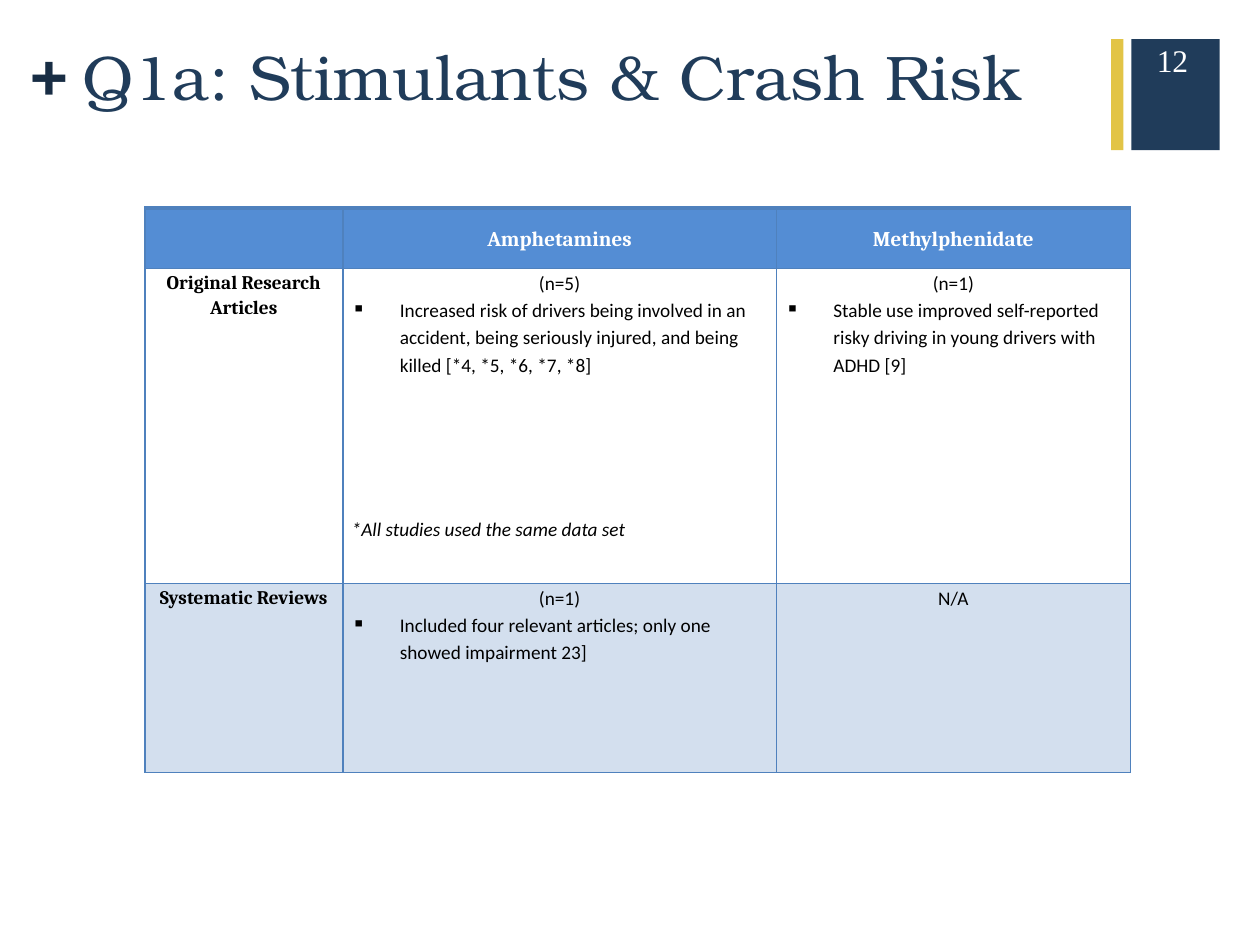
from lxml import etree
from pptx import Presentation
from pptx.dml.color import RGBColor
from pptx.enum.shapes import MSO_SHAPE
from pptx.enum.text import MSO_ANCHOR, MSO_AUTO_SIZE, PP_ALIGN
from pptx.oxml.ns import qn
from pptx.util import Cm, Pt

NAVY = RGBColor(0x20, 0x3C, 0x5A)
DARK = RGBColor(0x18, 0x2D, 0x44)
GOLD = RGBColor(0xE2, 0xC4, 0x46)
BLUE = RGBColor(0x54, 0x8D, 0xD4)
PALE = RGBColor(0xD3, 0xDF, 0xEE)
EDGE = RGBColor(0x4F, 0x81, 0xBD)
WHITE = RGBColor(0xFF, 0xFF, 0xFF)
BLACK = RGBColor(0, 0, 0)

RECT = MSO_SHAPE.RECTANGLE
LEFT, CENTER = PP_ALIGN.LEFT, PP_ALIGN.CENTER
TOP, MIDDLE = MSO_ANCHOR.TOP, MSO_ANCHOR.MIDDLE
FIXED = MSO_AUTO_SIZE.NONE

SERIF, HEAD, BODY = "TeX Gyre Bonum", "Cambria", "Calibri"
COLS = (3.99, 8.74, 7.14)
ROWS = (1.22, 6.35, 3.81)
FILLS = (BLUE, None, PALE)

# Each cell is a list of (kind, text) paragraphs
CELLS = (
    ([], [("head", "Amphetamines")], [("head", "Methylphenidate")]),
    (
        [("label", "Original Research Articles")],
        [
            ("count", "(n=5)"),
            ("bullet", "Increased risk of drivers being involved in an accident, "
                       "being seriously injured, and being killed "
                       "[*4, *5, *6, *7, *8]"),
            ("note", "*All studies used the same data set"),
        ],
        [
            ("count", "(n=1)"),
            ("bullet", "Stable use improved self-reported risky driving "
                       "in young drivers with ADHD [9]"),
        ],
    ),
    (
        [("label", "Systematic Reviews")],
        [
            ("count", "(n=1)"),
            ("bullet", "Included four relevant articles; "
                       "only one showed impairment 23]"),
        ],
        [("count", "N/A")],
    ),
)


def set_font(para, name, size, color, bold=False, italic=False):
    font = para.font
    font.name, font.size = name, Pt(size)
    font.bold, font.italic = bold, italic
    font.color.rgb = color


def add_bar(slide, left, top, width, height, color):
    bar = slide.shapes.add_shape(RECT, Cm(left), Cm(top), Cm(width), Cm(height))
    bar.shadow.inherit = False
    bar.fill.solid()
    bar.fill.fore_color.rgb = color
    bar.line.fill.background()


def add_label(slide, left, top, width, height, text, inset):
    box = slide.shapes.add_textbox(Cm(left), Cm(top), Cm(width), Cm(height))
    frame = box.text_frame
    frame.word_wrap = True
    frame.margin_left = frame.margin_right = Cm(2 * inset)
    frame.margin_top = frame.margin_bottom = Cm(inset)
    para = frame.paragraphs[0]
    para.text = text
    return para


def add_header(slide, left, top, width):
    # Plus sign and title
    plus = add_label(slide, left, top, 0.71, 1.55, "+", 0)
    set_font(plus, SERIF, 36, DARK, bold=True)
    title = slide.shapes.title
    title.left, title.top = Cm(left + 0.79), Cm(top + 0.05)
    title.width, title.height = Cm(20.98), Cm(1.65)
    frame = title.text_frame
    frame.auto_size = FIXED
    frame.vertical_anchor = MIDDLE
    para = frame.paragraphs[0]
    para.text = "Q1a: Stimulants & Crash Risk"
    para.alignment = LEFT
    set_font(para, SERIF, 36, NAVY)

    # Bars and page number at the right edge
    right = left + width
    add_bar(slide, right - 2.19, top + 0.15, 0.25, 2.24, GOLD)
    add_bar(slide, right - 1.78, top + 0.15, 1.78, 2.24, NAVY)
    page = add_label(slide, right - 1.53, top + 0.05, 1.55, 1.02, "12", 0.13)
    set_font(page, "Times New Roman", 18, WHITE)


def add_edges(cell, top):
    props = cell._tc.get_or_add_tcPr()
    for side, width in (("L", 1), ("R", 1), ("T", top), ("B", 1)):
        line = etree.SubElement(props, qn(f"a:ln{side}"), w=str(Pt(width)))
        fill = etree.SubElement(line, qn("a:solidFill"))
        etree.SubElement(fill, qn("a:srgbClr"), val=str(EDGE))


def add_bullet(para):
    props = para._p.get_or_add_pPr()
    hang = Cm(0.97)
    props.set("marL", str(hang))
    props.set("indent", str(-hang))
    etree.SubElement(props, qn("a:buChar"), char="▪")


def fill_cell(cell, parts):
    frame = cell.text_frame
    for i, (kind, text) in enumerate(parts):
        para = frame.add_paragraph() if i else frame.paragraphs[0]
        para.text = text
        para.line_spacing = 1.15
        para.alignment = LEFT if kind in ("bullet", "note") else CENTER
        if kind == "bullet":
            add_bullet(para)
        if kind == "note":
            para.space_before = Pt(78)
        if kind == "head":
            set_font(para, HEAD, 12, WHITE, bold=True)
        elif kind == "label":
            set_font(para, HEAD, 11, BLACK, bold=True)
        else:
            set_font(para, BODY, 11, BLACK, italic=kind == "note")


def add_grid(slide, left, top):
    frame = slide.shapes.add_table(
        len(ROWS), len(COLS), Cm(left), Cm(top), Cm(sum(COLS)), Cm(sum(ROWS)))
    table = frame.table
    table.first_row = table.horz_banding = False
    for col, width in zip(table.columns, COLS):
        col.width = Cm(width)
    for r, (row, height) in enumerate(zip(table.rows, ROWS)):
        row.height = Cm(height)
        for cell, parts in zip(row.cells, CELLS[r]):
            cell.margin_left = cell.margin_right = Cm(0.18)
            cell.margin_top = cell.margin_bottom = 0
            cell.vertical_anchor = TOP if r else MIDDLE
            add_edges(cell, 1 if r else 2.25)
            if FILLS[r] is None:
                cell.fill.background()
            else:
                cell.fill.solid()
                cell.fill.fore_color.rgb = FILLS[r]
            fill_cell(cell, parts)


def main():
    deck = Presentation()
    deck.slide_width, deck.slide_height = Cm(25.4), Cm(19.05)
    slide = deck.slides.add_slide(deck.slide_layouts[5])
    add_header(slide, 0.61, 0.64, 23.98)
    add_grid(slide, 2.92, 4.19)
    deck.save("out.pptx")


if __name__ == "__main__":
    main()
